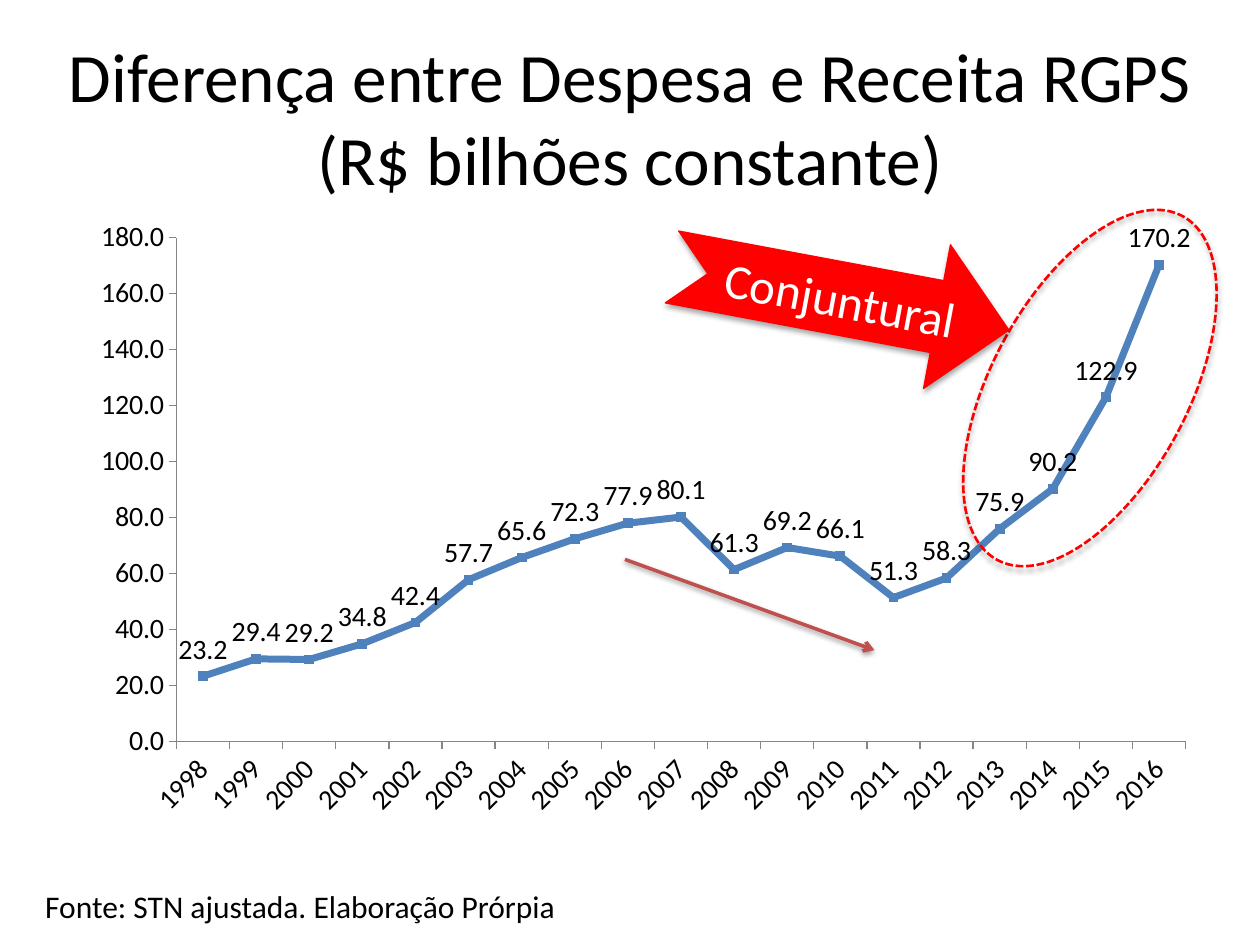
from pptx import Presentation
from pptx.chart.data import CategoryChartData
from pptx.dml.color import RGBColor
from pptx.enum.chart import XL_CHART_TYPE, XL_LABEL_POSITION, XL_MARKER_STYLE, XL_TICK_MARK
from pptx.enum.dml import MSO_LINE
from pptx.enum.shapes import MSO_CONNECTOR, MSO_SHAPE
from pptx.enum.text import MSO_ANCHOR, PP_ALIGN
from pptx.oxml import parse_xml
from pptx.oxml.ns import nsdecls, qn
from pptx.util import Inches, Pt
from lxml.etree import SubElement

TITLE = "Diferença entre Despesa e Receita RGPS\v(R$ bilhões constante)"
SOURCE = "Fonte: STN ajustada. Elaboração Prórpia"
CALLOUT = "Conjuntural"
FIRST_YEAR = 1998
DEFICITS = [23.2, 29.4, 29.2, 34.8, 42.4, 57.7, 65.6, 72.3, 77.9, 80.1,
            61.3, 69.2, 66.1, 51.3, 58.3, 75.9, 90.2, 122.9, 170.2]
PLOT_AREA = {"x": 0.1, "y": 0.027, "w": 0.89, "h": 0.808}

THEME = {
    "font": "Calibri",
    "text": RGBColor(0, 0, 0),
    "light": RGBColor(255, 255, 255),
    "series": RGBColor(0x4F, 0x81, 0xBD),
    "alert": RGBColor(255, 0, 0),
    "trend": RGBColor(0xC0, 0x50, 0x4D),
    "axis": RGBColor(0x86, 0x86, 0x86),
    "title_size": Pt(39.6),
    "source_size": Pt(18),
    "chart_size": Pt(16),
    "callout_size": Pt(28),
}


def box(left, top, width, height):
    return [Inches(v) for v in (left, top, width, height)]


def style_font(font, size, color):
    for key, value in {"name": THEME["font"], "size": size, "bold": False}.items():
        setattr(font, key, value)
    font.color.rgb = color


def write(frame, text, size, color, align):
    paragraph = frame.paragraphs[0]
    paragraph.text = text
    paragraph.alignment = align
    for run in paragraph.runs:
        style_font(run.font, size, color)


def style_line(line, color, width):
    line.color.rgb = color
    line.width = Pt(width)


def add_shadow(shape, alpha, distance):
    properties = shape._element.spPr
    for old in properties.findall(qn("a:effectLst")):
        properties.remove(old)
    properties.append(parse_xml(
        f'<a:effectLst {nsdecls("a")}><a:outerShdw blurRad="{Pt(3.1)}" dist="{Pt(distance)}" '
        f'dir="5400000" rotWithShape="0"><a:srgbClr val="000000">'
        f'<a:alpha val="{alpha * 1000}"/></a:srgbClr></a:outerShdw></a:effectLst>'))


def add_callout_shape(slide, kind, place, rotation, line_width):
    shape = slide.shapes.add_shape(kind, *box(*place))
    shape.rotation = rotation
    style_line(shape.line, THEME["alert"], line_width)
    shape.shadow.inherit = False
    add_shadow(shape, 35, 1.8)
    return shape


def place_plot(chart):
    plot_area = chart._chartSpace.chart.plotArea
    for old in plot_area.findall(qn("c:layout")):
        plot_area.remove(old)
    modes = {"layoutTarget": "inner", "xMode": "edge", "yMode": "edge"}
    entries = "".join(f'<c:{k} val="{v}"/>' for k, v in {**modes, **PLOT_AREA}.items())
    plot_area.insert(0, parse_xml(
        f'<c:layout {nsdecls("c")}><c:manualLayout>{entries}</c:manualLayout></c:layout>'))


def add_deficit_chart(slide):
    data = CategoryChartData(number_format="#,##0.0")
    data.categories = [str(FIRST_YEAR + i) for i in range(len(DEFICITS))]
    data.add_series("Series 1", DEFICITS)
    chart = slide.shapes.add_chart(
        XL_CHART_TYPE.LINE_MARKERS, *box(0.5, 1.75, 9, 4.95), data).chart
    chart.has_legend = chart.has_title = False
    style_font(chart.font, THEME["chart_size"], THEME["text"])
    place_plot(chart)

    for axis in (chart.category_axis, chart.value_axis):
        axis.has_major_gridlines = False
        axis.major_tick_mark = XL_TICK_MARK.OUTSIDE
        axis.minor_tick_mark = XL_TICK_MARK.NONE
        style_line(axis.format.line, THEME["axis"], 0.75)
    for key, value in {"minimum_scale": 0, "maximum_scale": 180, "major_unit": 20}.items():
        setattr(chart.value_axis, key, value)
    chart.category_axis.tick_labels.font.size = THEME["chart_size"]
    chart.category_axis._element.txPr.bodyPr.set("rot", "-2700000")

    plot = chart.plots[0]
    plot.vary_by_categories = False
    series = plot.series[0]
    series.smooth = False
    style_line(series.format.line, THEME["series"], 4)
    series.marker.style = XL_MARKER_STYLE.SQUARE
    series.marker.size = 5
    series.marker.format.fill.solid()
    series.marker.format.fill.fore_color.rgb = THEME["series"]
    style_line(series.marker.format.line, THEME["series"], 0.75)
    labels = series.data_labels
    label_format = {"show_value": True, "position": XL_LABEL_POSITION.ABOVE,
                    "number_format": "#,##0.0", "number_format_is_linked": False}
    for key, value in label_format.items():
        setattr(labels, key, value)
    style_font(labels.font, THEME["chart_size"], THEME["text"])


def main():
    deck = Presentation()
    deck.slide_width, deck.slide_height = Inches(10), Inches(7.5)
    slide = deck.slides.add_slide(deck.slide_layouts[5])

    title = slide.shapes.title
    title.left, title.top, title.width, title.height = box(0, 0.3, 10, 1.25)
    title.text_frame.vertical_anchor = MSO_ANCHOR.MIDDLE
    write(title.text_frame, TITLE, THEME["title_size"], THEME["text"], PP_ALIGN.CENTER)

    source = slide.shapes.add_textbox(*box(0.26, 6.99, 4.29, 0.4))
    source.text_frame.word_wrap = False
    write(source.text_frame, SOURCE, THEME["source_size"], THEME["text"], PP_ALIGN.LEFT)

    add_deficit_chart(slide)

    trend = slide.shapes.add_connector(MSO_CONNECTOR.STRAIGHT, *box(4.96, 4.44, 6.94, 5.16))
    style_line(trend.line, THEME["trend"], 2)
    SubElement(trend.line._get_or_add_ln(), qn("a:tailEnd"), type="arrow")
    add_shadow(trend, 38, 1.6)

    surge = add_callout_shape(slide, MSO_SHAPE.OVAL, (7.87, 1.53, 1.56, 3.1), 28.3, 1.5)
    surge.fill.background()
    surge.line.dash_style = MSO_LINE.SQUARE_DOT

    callout = add_callout_shape(
        slide, MSO_SHAPE.NOTCHED_RIGHT_ARROW, (5.31, 1.79, 2.72, 1.16), 10.6, 0.75)
    callout.fill.solid()
    callout.fill.fore_color.rgb = THEME["alert"]
    callout.text_frame.word_wrap = True
    callout.text_frame.vertical_anchor = MSO_ANCHOR.MIDDLE
    write(callout.text_frame, CALLOUT, THEME["callout_size"], THEME["light"], PP_ALIGN.CENTER)

    deck.save("out.pptx")


if __name__ == "__main__":
    main()
